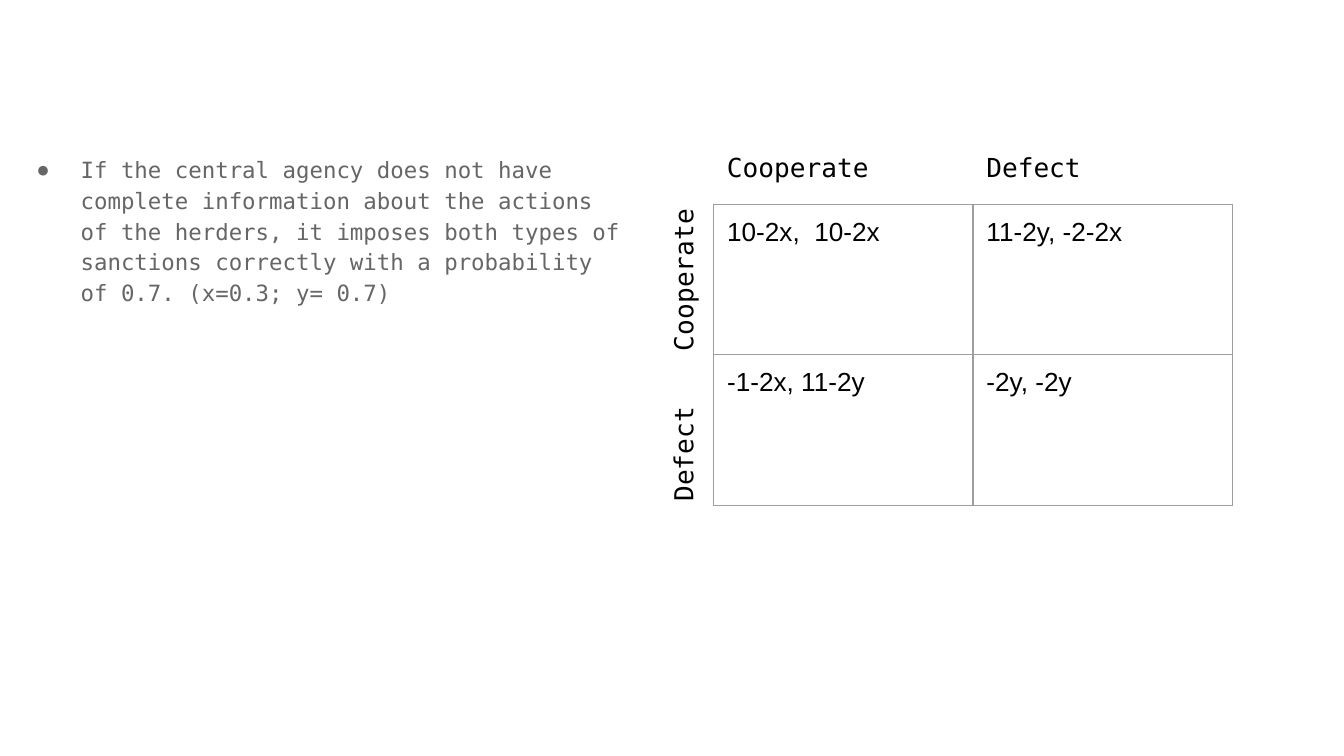
"""Builds a slide on herders' payoffs under imperfectly informed sanctions."""
import pptx
import pptx.dml.color
import pptx.enum.text
import pptx.oxml
import pptx.oxml.ns
import pptx.util
from lxml import etree

COLOURS = {"background": "FFFFFF", "statement": "666666", "payoff": "000000", "grid": "9E9E9E"}
SANS, MONO = "Arial", "DejaVu Sans Mono"
STATEMENT = (
    "If the central agency does not have complete information about the actions "
    "of the herders, it imposes both types of sanctions correctly with a "
    "probability of 0.7. (x=0.3; y= 0.7)"
)
STRATEGIES = [("Cooperate", 1.41), ("Defect", 1.08)]
PAYOFFS = [
    ["10-2x,  10-2x", "11-2y, -2-2x"],
    ["-1-2x, 11-2y", "-2y, -2y"],
]

WIDTH = 10
HEIGHT = WIDTH * 9 / 16
TOP = 1.03
GRID_LEFT, GRID_TOP = 5.31, 1.52
COLUMN, ROW = 1.93, 1.12
LABEL_HEIGHT, LABEL_OVERHANG = 0.43, 0.07
ROW_LABEL_CENTRE = 5.08
INSET = 0.1

inches = pptx.util.Inches


def colour(name):
    return pptx.dml.color.RGBColor.from_string(COLOURS[name])


def write(frame, text, font, size, ink):
    run = frame.paragraphs[0].add_run()
    run.text = text
    run.font.name = font
    run.font.size = pptx.util.Pt(size)
    run.font.color.rgb = colour(ink)


def inset(holder):
    for side in ("left", "top", "right", "bottom"):
        setattr(holder, f"margin_{side}", inches(INSET))


def add_statement(slide):
    body = slide.placeholders[1]
    body.left, body.top = inches(0), inches(TOP)
    body.width, body.height = inches(4.73), inches(3.73)
    frame = body.text_frame
    frame.word_wrap = True
    frame.auto_size = pptx.enum.text.MSO_AUTO_SIZE.NONE
    frame.vertical_anchor = pptx.enum.text.MSO_ANCHOR.TOP
    inset(frame)
    write(frame, STATEMENT, MONO, 12, "statement")
    paragraph = frame.paragraphs[0]
    paragraph.alignment = pptx.enum.text.PP_ALIGN.LEFT
    paragraph.line_spacing = 1.15
    paragraph.space_before = paragraph.space_after = pptx.util.Pt(0)
    properties = paragraph._p.get_or_add_pPr()
    properties.set("marL", str(inches(0.5)))
    properties.set("indent", str(inches(-0.33)))
    bullet_colour = etree.SubElement(properties, pptx.oxml.ns.qn("a:buClr"))
    etree.SubElement(bullet_colour, pptx.oxml.ns.qn("a:srgbClr"), val=COLOURS["statement"])
    etree.SubElement(properties, pptx.oxml.ns.qn("a:buFont"), typeface=SANS)
    etree.SubElement(properties, pptx.oxml.ns.qn("a:buChar"), char="●")


def add_borders(cell):
    properties = cell._tc.get_or_add_tcPr()
    for position, side in enumerate("LRTB"):
        border = pptx.oxml.parse_xml(
            f'<a:ln{side} {pptx.oxml.ns.nsdecls("a")} w="{pptx.util.Pt(0.75)}">'
            f'<a:solidFill><a:srgbClr val="{COLOURS["grid"]}"/></a:solidFill></a:ln{side}>'
        )
        properties.insert(position, border)


def add_payoffs(slide):
    rows, columns = len(PAYOFFS), len(PAYOFFS[0])
    matrix = slide.shapes.add_table(
        rows, columns, inches(GRID_LEFT), inches(GRID_TOP),
        inches(columns * COLUMN), inches(rows * ROW),
    ).table
    matrix.first_row = matrix.horz_banding = False
    for column in matrix.columns:
        column.width = inches(COLUMN)
    for row, payoffs in zip(matrix.rows, PAYOFFS):
        row.height = inches(ROW)
        for cell, payoff in zip(row.cells, payoffs):
            cell.fill.background()
            inset(cell)
            write(cell.text_frame, payoff, SANS, 14, "payoff")
            add_borders(cell)


def add_label(slide, text, left, top, width, rotation=0):
    label = slide.shapes.add_textbox(
        inches(left), inches(top), inches(width), inches(LABEL_HEIGHT)
    )
    label.rotation = rotation
    frame = label.text_frame
    frame.word_wrap = True
    frame.auto_size = pptx.enum.text.MSO_AUTO_SIZE.SHAPE_TO_FIT_TEXT
    inset(frame)
    write(frame, text, MONO, 14, "payoff")


def add_strategies(slide):
    for index, (strategy, length) in enumerate(STRATEGIES):
        add_label(slide, strategy, GRID_LEFT + index * COLUMN, TOP, 1.75)
        row_bottom = GRID_TOP + (index + 1) * ROW
        centre = row_bottom + LABEL_OVERHANG - length / 2
        add_label(
            slide, strategy, ROW_LABEL_CENTRE - length / 2,
            centre - LABEL_HEIGHT / 2, length, 270,
        )


def main():
    deck = pptx.Presentation()
    deck.slide_width, deck.slide_height = inches(WIDTH), inches(HEIGHT)
    slide = deck.slides.add_slide(deck.slide_layouts[1])
    slide.background.fill.solid()
    slide.background.fill.fore_color.rgb = colour("background")
    title = slide.shapes.title._element
    title.getparent().remove(title)
    add_statement(slide)
    add_payoffs(slide)
    add_strategies(slide)
    deck.save("out.pptx")


if __name__ == "__main__":
    main()
